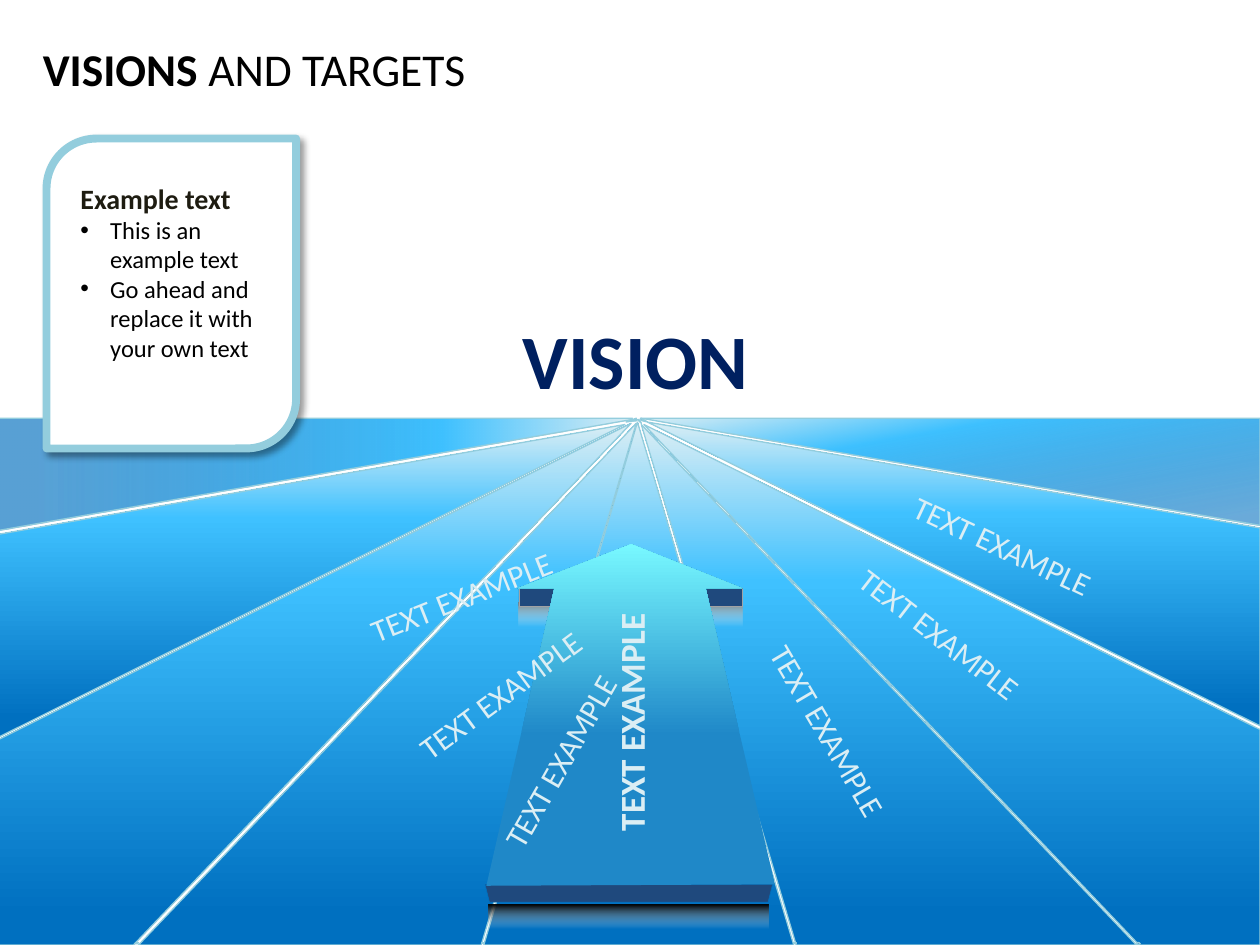
from lxml.etree import SubElement
from pptx import Presentation
from pptx.dml.color import RGBColor
from pptx.enum.shapes import MSO_SHAPE
from pptx.enum.text import MSO_ANCHOR, MSO_AUTO_SIZE, PP_ALIGN
from pptx.oxml.ns import qn
from pptx.util import Pt

COLORS = {
    "black": "000000", "gray": "808080", "white": "FFFFFF", "ink": "1E1C11",
    "navy": "002060", "side": "1F497D", "side_line": "A0A2A4", "deep": "0070C0",
    "sky": "3FC1FF", "pale": "DBEEF4", "edge": "93CDDD", "chip": "4F81BE",
    "arrow": "1F88C8", "arrow_tip": "78F8FF",
}
LANE_STOPS = [(6, "deep", 100), (70, "sky", 100), (100, "pale", 100)]
LANES = [
    [(276.5, 540), (453.6, 540), (364.3, 241.2)],
    [(-0.7, 422.6), (-0.7, 540), (76.3, 540), (360.7, 241.9)],
    [(720, 414.7), (720, 301.7), (370.1, 241.2)],
    [(79.2, 540), (275, 540), (363.6, 241.9)],
    [(-0.7, 305.3), (-0.7, 421.2), (357.1, 242.6)],
    [(650.9, 540), (720, 540), (720, 416.9), (367.9, 242.6)],
    [(455, 540), (649.4, 540), (366.5, 242.6)],
]
HORIZONS = [
    ([(361.4, 239), (-0.7, 239), (-0.7, 303.1), (360.7, 239.8)], 65, 0),
    ([(720, 300.2), (720, 239), (365.8, 239), (366.5, 239)], 58, 260),
]
CHIPS = [
    [(453.6, 539.3), (455, 539.3), (455, 538.6), (453.6, 538.6)],
    [(650.2, 540), (651.6, 539.3), (650.9, 538.6), (649.4, 538.6)],
    [(275, 539.3), (276.5, 539.3), (276.5, 538.6), (275, 538.6)],
    [(77, 539.3), (78.5, 539.3), (79.2, 538.6), (77.8, 538.6)],
    [(364.3, 239.8), (366.5, 241.9), (365.8, 240.5), (365, 239.8)],
    [(366.5, 239), (365.8, 239.8), (367.2, 240.5), (370.1, 241.2)],
    [(363.6, 239), (361.4, 239.8), (357.8, 241.2), (362.2, 240.5), (363.6, 239.8)],
    [(361.4, 240.5), (362.2, 240.5), (363.6, 240.5), (363.6, 239.8)],
]
ARROW = [(442.8, 505.4), (277.9, 506.2), (316.8, 336.2), (295.9, 336.2),
         (360.7, 311), (424.1, 336.2), (403.2, 336.2)]
LABELS = [
    (473, 417.6, 59.5), (536.8, 362.2, 37.7), (572.8, 311.8, 25.2),
    (285.8, 397, -36.4), (263.5, 341, -21.6), (320, 435, -60.2),
]
LABEL_FORMAT = {"size": Pt(18), "color": "pale"}
TITLE_FORMAT = {"size": Pt(26), "color": "black"}


def set_gradient(shape, stops, angle):
    """Fill a shape with (position, colour, opacity) stops at a clockwise angle."""
    shape.fill.gradient()
    shape.fill.gradient_angle = (360 - angle) % 360
    stop_list = shape._element.spPr.find(".//" + qn("a:gsLst"))
    stop_list.clear()
    for position, color, opacity in stops:
        stop = SubElement(stop_list, qn("a:gs"), pos=str(position * 1000))
        value = SubElement(stop, qn("a:srgbClr"), val=COLORS[color])
        if opacity < 100:
            SubElement(value, qn("a:alpha"), val=str(opacity * 1000))


def style_shape(shape, fill=None, stops=None, angle=270, line=None, width=0.75):
    """Set fill and outline and remove the inherited shadow."""
    shape.shadow.inherit = False
    if stops:
        set_gradient(shape, stops, angle)
    else:
        shape.fill.solid()
        shape.fill.fore_color.rgb = RGBColor.from_string(COLORS[fill])
    if line:
        shape.line.color.rgb = RGBColor.from_string(COLORS[line])
        shape.line.width = Pt(width)
    else:
        shape.line.fill.background()
    return shape


def add_polygon(shapes, points, **style):
    """Add a closed outline through points."""
    start, *others = [(Pt(x), Pt(y)) for x, y in points]
    builder = shapes.build_freeform(*start)
    builder.add_line_segments(others, close=True)
    return style_shape(builder.convert_to_shape(), **style)


def add_preset(shapes, kind, box, **style):
    """Add a styled preset shape."""
    return style_shape(shapes.add_shape(kind, *map(Pt, box)), **style)


def add_run(paragraph, text, color, **formats):
    """Add a Calibri run with the given font values."""
    run = paragraph.add_run()
    run.text = text
    for name, value in {"name": "Calibri", "bold": False, **formats}.items():
        setattr(run.font, name, value)
    run.font.color.rgb = RGBColor.from_string(COLORS[color])


def add_label(slide, text, center, extent, rotation=0, **formats):
    """Add one centred line of text around a point."""
    (x, y), (width, height) = center, extent
    box = slide.shapes.add_textbox(
        *map(Pt, (x - width / 2, y - height / 2, width, height)))
    box.rotation = rotation
    box.text_frame.word_wrap = False
    paragraph = box.text_frame.paragraphs[0]
    paragraph.alignment = PP_ALIGN.CENTER
    add_run(paragraph, text, **formats)


def add_title(slide):
    """Place and format the title."""
    title = slide.shapes.title
    for name, value in zip(("left", "top", "width", "height"), (24.5, 15.1, 671, 47.5)):
        setattr(title, name, Pt(value))
    frame = title.text_frame
    for name, value in {"margin_left": 0, "margin_right": 0, "word_wrap": True,
                        "vertical_anchor": MSO_ANCHOR.MIDDLE,
                        "auto_size": MSO_AUTO_SIZE.NONE}.items():
        setattr(frame, name, value)
    paragraph = frame.paragraphs[0]
    paragraph.alignment = PP_ALIGN.LEFT
    add_run(paragraph, "VISIONS ", bold=True, **TITLE_FORMAT)
    add_run(paragraph, "AND TARGETS", **TITLE_FORMAT)


def add_road(slide):
    """Draw the lanes, which meet at the vanishing point."""
    for points in LANES:
        add_polygon(slide.shapes, points, stops=LANE_STOPS, line="edge")
    for points, opacity, angle in HORIZONS:
        stops = [(6, "deep", opacity), *LANE_STOPS[1:]]
        add_polygon(slide.shapes, points, stops=stops, angle=angle, line="edge")


def add_arrow(slide):
    """Draw the solid arrow with its sides and their reflections."""
    shapes = slide.shapes.add_group_shape().shapes
    for box, color in (((296.6, 344.2, 127.4, 13.7), "gray"),
                       ((279.4, 517, 159.8, 13.7), "black")):
        add_preset(shapes, MSO_SHAPE.RECTANGLE, box, angle=90,
                   stops=[(1, color, 100), (100, "white", 0)])
    add_preset(shapes, MSO_SHAPE.RECTANGLE, (296.6, 336.2, 127.4, 10.1),
               fill="side", line="side_line", width=0.25)
    front = add_preset(shapes, MSO_SHAPE.TRAPEZOID, (277.2, 505.4, 164.2, 10.1),
                       fill="side", line="deep", width=0.25)
    front.rotation = 180
    add_polygon(shapes, ARROW, stops=[(44, "arrow", 100), (100, "arrow_tip", 100)])


def add_card(slide):
    """Draw the note card and its bulleted text."""
    card = add_preset(slide.shapes, MSO_SHAPE.ROUND_2_DIAG_RECTANGLE,
                      (26.6, 79.2, 142.6, 177.1), fill="white", line="edge", width=4.5)
    card.adjustments[0] = 0.2
    effects = card._element.spPr.find(qn("a:effectLst"))
    shadow = SubElement(effects, qn("a:outerShdw"), blurRad=str(Pt(4)),
                        dist=str(Pt(3)), dir="2700000", algn="tl", rotWithShape="0")
    color = SubElement(shadow, qn("a:srgbClr"), val=COLORS["black"])
    SubElement(color, qn("a:alpha"), val="40000")
    frame = slide.shapes.add_textbox(*map(Pt, (38.9, 100.1, 121.7, 133.2))).text_frame
    frame.word_wrap = True
    add_run(frame.paragraphs[0], "Example text", "ink", size=Pt(16), bold=True)
    for text in ("This is an example text", "Go ahead and replace it with your own text"):
        paragraph = frame.add_paragraph()
        add_run(paragraph, text, "black", size=Pt(14))
        properties = paragraph._p.get_or_add_pPr()
        properties.set("marL", str(Pt(17)))
        properties.set("indent", str(-Pt(17)))
        SubElement(properties, qn("a:buFont"), typeface="Arial")
        SubElement(properties, qn("a:buChar"), char="•")


def main():
    """Build and save the slide."""
    presentation = Presentation()
    presentation.slide_width, presentation.slide_height = Pt(720), Pt(540)
    slide = presentation.slides.add_slide(presentation.slide_layouts[5])
    add_title(slide)
    add_road(slide)
    add_arrow(slide)
    for points in CHIPS:
        add_polygon(slide.shapes, points, fill="chip", line="edge", width=0)
    for x, y, rotation in LABELS:
        add_label(slide, "TEXT EXAMPLE", (x, y), (124.6, 29), rotation, **LABEL_FORMAT)
    add_label(slide, "TEXT EXAMPLE", (360.7, 412.6), (148.3, 31.5), -90,
              color="pale", size=Pt(20), bold=True)
    add_card(slide)
    add_label(slide, "VISION", (363.2, 205.2), (144.7, 60.5),
              color="navy", size=Pt(44), bold=True)
    presentation.save("out.pptx")


if __name__ == "__main__":
    main()
